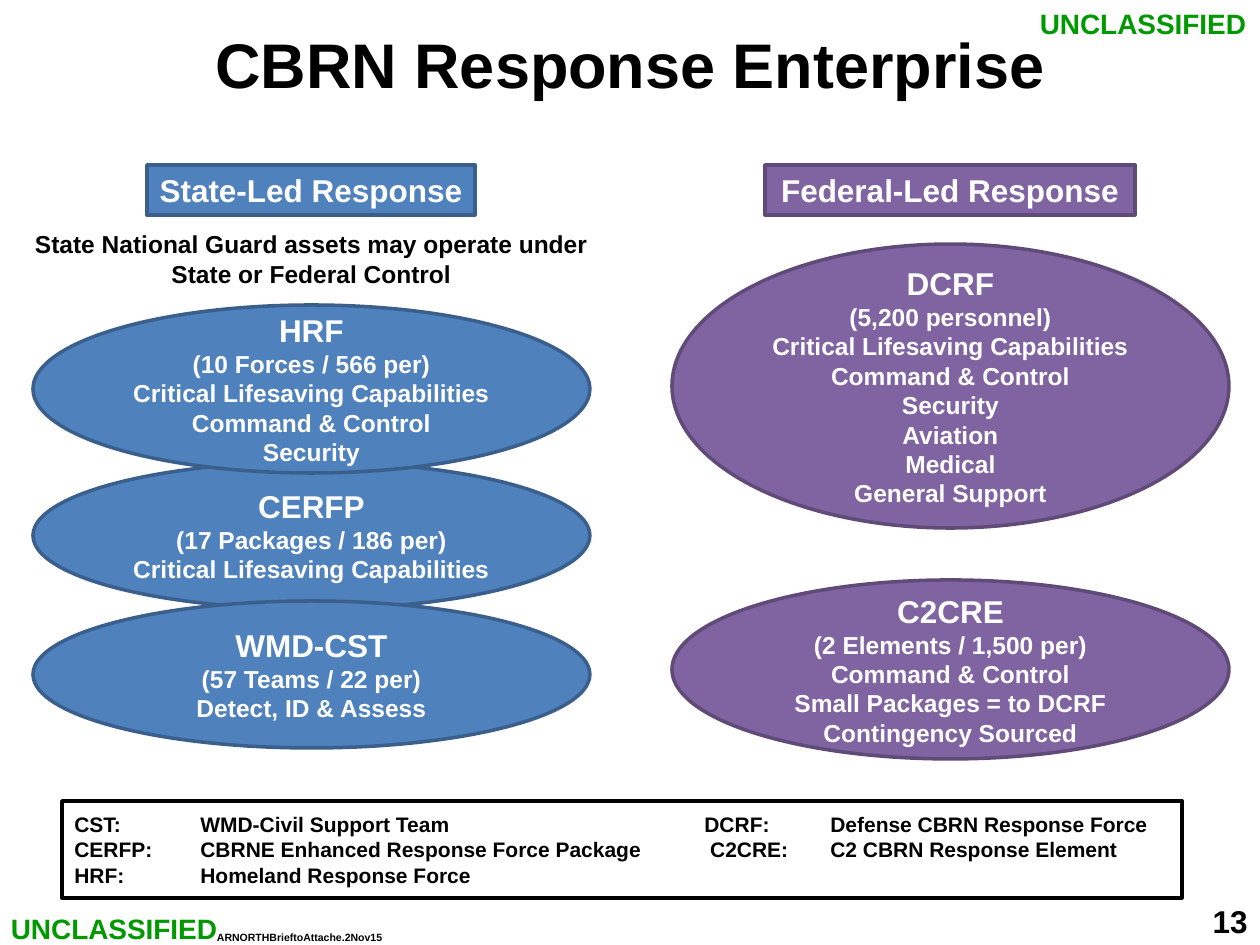
from lxml.etree import SubElement
from pptx import Presentation
from pptx.dml.color import RGBColor
from pptx.enum.shapes import MSO_SHAPE as Shape
from pptx.enum.text import MSO_ANCHOR as Anchor, PP_ALIGN as Align
from pptx.oxml.ns import qn
from pptx.util import Emu, Pt

SCALE = 914400 / 126
COLORS = {
    "state": "4F81BD", "state_edge": "3A5F8C",
    "federal": "8064A2", "federal_edge": "5F4A78",
    "white": "FFFFFF", "black": "000000", "marking": "009900",
}
STATE_LEFT, FEDERAL_LEFT, FORCE_WIDTH = 33, 672, 557
LIFESAVING, COMMAND = "Critical Lifesaving Capabilities", "Command & Control"

HEADINGS = [
    ("state", "State-Led Response", 147, 328),
    ("federal", "Federal-Led Response", 765, 370),
]
FORCES = [
    ("state", STATE_LEFT, 462, 147,
     ["CERFP", "(17 Packages / 186 per)", LIFESAVING]),
    ("state", STATE_LEFT, 305, 168,
     ["HRF", "(10 Forces / 566 per)", LIFESAVING, COMMAND, "Security"]),
    ("state", STATE_LEFT, 601, 147,
     ["WMD-CST", "(57 Teams / 22 per)", "Detect, ID & Assess"]),
    ("federal", FEDERAL_LEFT, 580, 179,
     ["C2CRE", "(2 Elements / 1,500 per)", COMMAND,
      "Small Packages = to DCRF", "Contingency Sourced"]),
    ("federal", FEDERAL_LEFT, 244, 284,
     ["DCRF", "(5,200 personnel)", LIFESAVING, COMMAND,
      "Security", "Aviation", "Medical", "General Support"]),
]
ACRONYMS = [
    "CST:\tWMD-Civil Support Team\tDCRF:\tDefense CBRN Response Force",
    "CERFP:\tCBRNE Enhanced Response Force Package\t C2CRE:\tC2 CBRN Response Element",
    "HRF:\tHomeland Response Force",
]
ACRONYM_TABS = [126, 630, 756]


def px(length):
    """Turn whole pixels into EMU."""
    return Emu(round(length * SCALE))


def rgb(name):
    """Look up a named colour."""
    return RGBColor.from_string(COLORS[name])


def add_tabs(paragraph, stops):
    """Give a paragraph left tab stops, in px from the text edge."""
    tab_list = SubElement(paragraph._p.get_or_add_pPr(), qn("a:tabLst"))
    for stop in stops:
        SubElement(tab_list, qn("a:tab"), pos=str(px(stop)), algn="l")


def write(holder, lines, sizes, color, align=Align.CENTER, anchor=Anchor.MIDDLE,
          wrap=True, tabs=()):
    """Fill a shape with bold lines; the last size holds for the remaining lines."""
    frame = holder.text_frame
    frame.text = "\n".join(lines)
    frame.word_wrap = wrap
    frame.vertical_anchor = anchor
    for index, paragraph in enumerate(frame.paragraphs):
        paragraph.alignment = align
        if tabs:
            add_tabs(paragraph, tabs)
        for run in paragraph.runs:
            run.font.name = "Arial"
            run.font.bold = True
            run.font.size = Pt(sizes[min(index, len(sizes) - 1)])
            run.font.color.rgb = rgb(color)


def add_panel(slide, kind, box, fill, edge=None):
    """Add a filled shape, outlined when an edge colour is given."""
    panel = slide.shapes.add_shape(kind, *map(px, box))
    panel.shadow.inherit = False
    panel.fill.solid()
    panel.fill.fore_color.rgb = rgb(fill)
    if edge:
        panel.line.color.rgb = rgb(edge)
        panel.line.width = Pt(2)
    else:
        panel.line.fill.background()
    return panel


def add_label(slide, box, lines, size, color="black", anchor=Anchor.TOP, wrap=False):
    """Add a centred text box."""
    label = slide.shapes.add_textbox(*map(px, box))
    write(label, lines, [size], color, anchor=anchor, wrap=wrap)


def main():
    """Build the slide and save it."""
    deck = Presentation()
    deck.slide_width, deck.slide_height = px(1260), px(945)
    slide = deck.slides.add_slide(deck.slide_layouts[6])

    add_label(slide, (63, 0, 1134, 126), ["CBRN Response Enterprise"], 36,
              anchor=Anchor.MIDDLE, wrap=True)
    for side, heading, left, width in HEADINGS:
        banner = add_panel(slide, Shape.RECTANGLE, (left, 165, width, 50),
                           side, f"{side}_edge")
        write(banner, [heading], [18], "white", wrap=False)
    add_label(slide, (21, 223, 581, 72),
              ["State National Guard assets may operate under",
               "State or Federal Control"], 14)
    for side, left, top, height, lines in FORCES:
        force = add_panel(slide, Shape.OVAL, (left, top, FORCE_WIDTH, height),
                          side, f"{side}_edge")
        write(force, lines, [18, 14], "white")

    page_number = add_panel(slide, Shape.RECTANGLE, (998, 896, 262, 49), "white")
    write(page_number, ["13"], [18], "black", Align.RIGHT, Anchor.TOP)
    for left, top in [(1026, 0), (-3, 905)]:
        add_label(slide, (left, top, 234, 47), ["UNCLASSIFIED"], 16, "marking")
    acronym_key = add_panel(slide, Shape.RECTANGLE, (62, 801, 1120, 97),
                            "white", "black")
    write(acronym_key, ACRONYMS, [12], "black", Align.LEFT, tabs=ACRONYM_TABS)
    add_label(slide, (203, 925, 193, 25), ["ARNORTHBrieftoAttache.2Nov15"], 6)
    deck.save("out.pptx")


if __name__ == "__main__":
    main()
